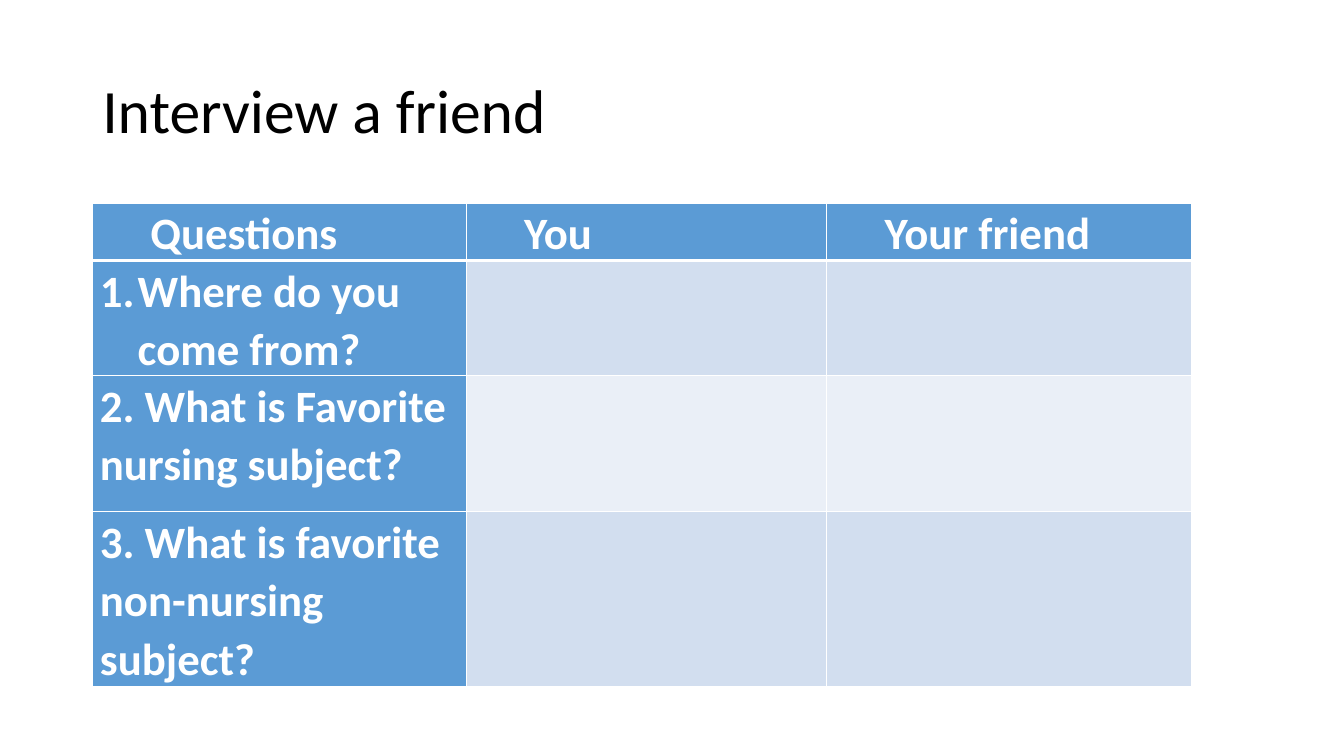
from lxml.etree import SubElement
from pptx import Presentation
from pptx.dml.color import RGBColor
from pptx.enum.text import MSO_ANCHOR
from pptx.oxml.ns import qn
from pptx.util import Pt

BLACK = RGBColor(0x00, 0x00, 0x00)
WHITE = RGBColor(0xFF, 0xFF, 0xFF)
BLUE = RGBColor(0x5B, 0x9B, 0xD5)
BANDS = RGBColor(0xD2, 0xDE, 0xEF), RGBColor(0xEA, 0xEF, 0xF7)

HEADINGS = ["Questions", "You", "Your friend"]
QUESTIONS = [
    "Where do you come from?",
    "2. What is Favorite nursing subject?",
    "3. What is favorite non-nursing subject?",
]
COLUMN_WIDTHS = [267, 257.5, 261]
ROW_HEIGHTS = [40.5, 82.25, 97.25, 124.75]


def style_text(paragraph, size, color, spacing, bold=False):
    """Give a paragraph its font and line spacing."""
    font = paragraph.font
    font.name, font.size, font.bold = "Calibri", Pt(size), bold
    font.color.rgb = color
    paragraph.line_spacing = spacing


def indent(paragraph, margin, first_line=0):
    """Indent a paragraph and return its properties."""
    properties = paragraph._p.get_or_add_pPr()
    properties.set("marL", str(Pt(margin)))
    properties.set("indent", str(Pt(first_line)))
    return properties


def border_cell(cell, row):
    """Draw white borders, with a heavy rule under the heading row."""
    properties = cell._tc.get_or_add_tcPr()
    for side in "LRTB":
        heavy = (row, side) in ((0, "B"), (1, "T"))
        line = SubElement(properties, qn(f"a:ln{side}"), w=str(Pt(3 if heavy else 1)))
        fill = SubElement(line, qn("a:solidFill"))
        SubElement(fill, qn("a:srgbClr"), val=str(WHITE))


def add_title(slide, left, top, width, height):
    """Write the slide title in its box."""
    frame = slide.shapes.add_textbox(Pt(left), Pt(top), Pt(width), Pt(height)).text_frame
    frame.word_wrap = True
    frame.vertical_anchor = MSO_ANCHOR.MIDDLE
    title = frame.paragraphs[0]
    title.text = "Interview a friend"
    style_text(title, 44, BLACK, 0.9)


def add_interview(slide, left, top):
    """Build the table of questions with room for two sets of answers."""
    rows = [HEADINGS] + [[question, "", ""] for question in QUESTIONS]
    interview = slide.shapes.add_table(
        len(rows), len(HEADINGS), Pt(left), Pt(top),
        Pt(sum(COLUMN_WIDTHS)), Pt(sum(ROW_HEIGHTS))).table
    for column, width in zip(interview.columns, COLUMN_WIDTHS):
        column.width = Pt(width)
    for row, height in zip(interview.rows, ROW_HEIGHTS):
        row.height = Pt(height)
    for r, words in enumerate(rows):
        for c, wording in enumerate(words):
            cell = interview.cell(r, c)
            border_cell(cell, r)
            cell.fill.solid()
            cell.fill.fore_color.rgb = BLUE if r == 0 or c == 0 else BANDS[(r - 1) % 2]
            if not wording:
                continue
            cell.margin_left = cell.margin_right = Pt(5.4)
            cell.margin_top = cell.margin_bottom = 0
            paragraph = cell.text_frame.paragraphs[0]
            paragraph.text = wording
            style_text(paragraph, 32, WHITE, 1.07, bold=True)
            if r == 0:
                indent(paragraph, 36)
    numbered = interview.cell(1, 0).text_frame.paragraphs[0]
    numbering = SubElement(indent(numbered, 27, -27), qn("a:buAutoNum"), type="arabicPeriod")
    numbering.getparent().find(qn("a:defRPr")).addprevious(numbering)


def main():
    """Build and save the interview slide."""
    deck = Presentation()
    deck.slide_width, deck.slide_height = Pt(960), Pt(540)
    slide = deck.slides.add_slide(deck.slide_layouts[6])
    add_title(slide, 66, 28.75, 828, 104.4)
    add_interview(slide, 66, 145)
    deck.save("out.pptx")


if __name__ == "__main__":
    main()
